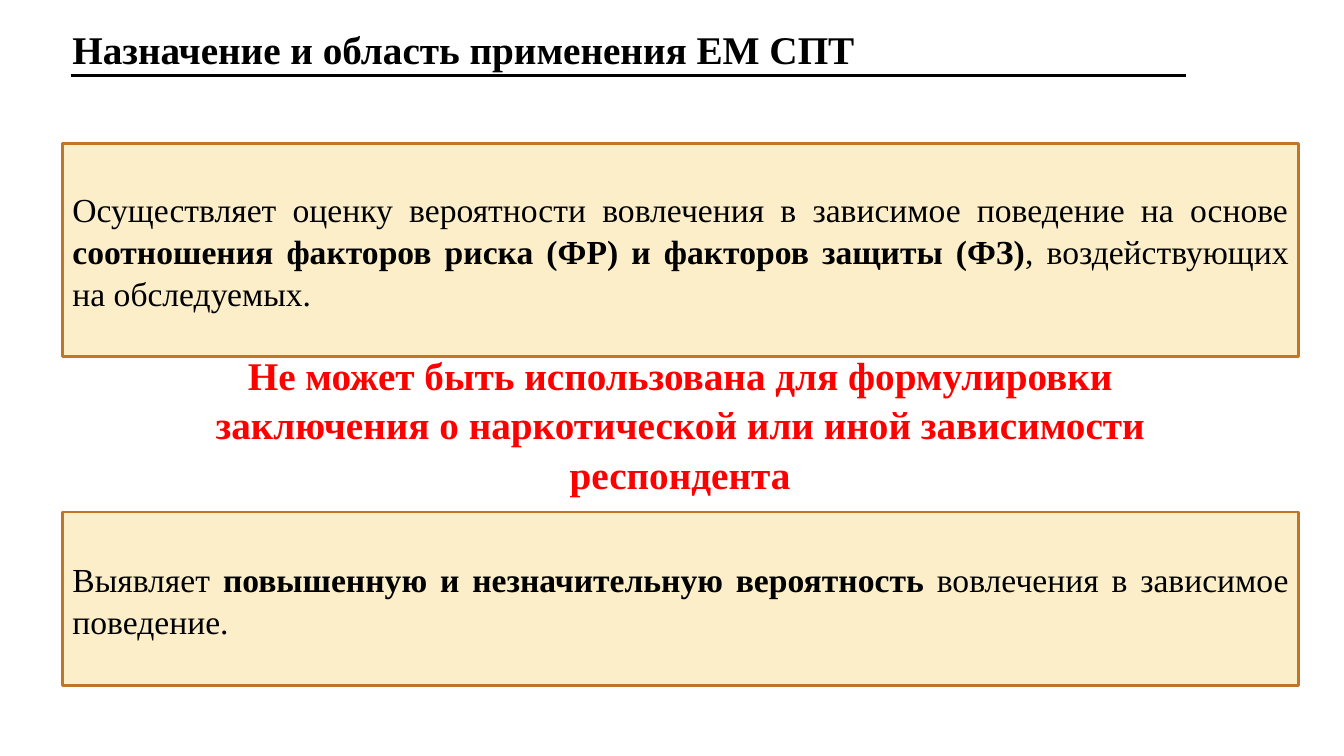
from typing import NamedTuple

from lxml.etree import SubElement
from pptx import Presentation
from pptx.dml.color import RGBColor
from pptx.enum.shapes import MSO_CONNECTOR, MSO_SHAPE
from pptx.enum.text import MSO_ANCHOR as Anchor, PP_ALIGN as Align
from pptx.oxml.ns import qn
from pptx.shapes.base import BaseShape
from pptx.slide import Slide
from pptx.util import Inches, Pt

BLACK = RGBColor(0x00, 0x00, 0x00)
RED = RGBColor(0xFF, 0x00, 0x00)
CREAM = RGBColor(0xFB, 0xEE, 0xC9)
OCHRE = RGBColor(0xC1, 0x75, 0x29)

FONT = "Times New Roman"
LINE_SPACING = 1.05
PANEL_LEFT, PANEL_WIDTH = 0.62, 12.26


class Run(NamedTuple):
    text: str
    bold: bool = False


class Panel(NamedTuple):
    top: float
    height: float
    runs: list[Run]


PANELS = [
    Panel(1.42, 2.12, [
        Run("Осуществляет оценку вероятности вовлечения в зависимое поведение на основе "),
        Run("соотношения факторов риска (ФР) и факторов защиты (ФЗ)", bold=True),
        Run(", воздействующих на обследуемых."),
    ]),
    Panel(5.08, 1.72, [
        Run("Выявляет "),
        Run("повышенную и незначительную вероятность ", bold=True),
        Run("вовлечения в зависимое поведение."),
    ]),
]


def write_text(shape: BaseShape, runs: list[Run], *, size: float, color: RGBColor = BLACK,
               align: Align = Align.LEFT, anchor: Anchor = Anchor.TOP,
               wrap: bool = True) -> None:
    """Fill a shape with one paragraph of formatted runs."""
    frame = shape.text_frame
    frame.word_wrap = wrap
    frame.vertical_anchor = anchor
    paragraph = frame.paragraphs[0]
    paragraph.alignment = align
    paragraph.line_spacing = LINE_SPACING
    for text, bold in runs:
        run = paragraph.add_run()
        run.text = text
        run.font.name = FONT
        run.font.size = Pt(size)
        run.font.bold = bold
        run.font.color.rgb = color


def add_title(slide: Slide, title: str) -> None:
    box = slide.shapes.add_textbox(Inches(PANEL_LEFT), Inches(0.18), Inches(8.04), Inches(0.57))
    write_text(box, [Run(title, bold=True)], size=28, wrap=False)
    rule = slide.shapes.add_connector(
        MSO_CONNECTOR.STRAIGHT, Inches(0.7), Inches(0.75), Inches(11.76), Inches(0.75))
    rule.line.color.rgb = BLACK
    rule.line.width = Pt(2)
    SubElement(rule._element.spPr, qn("a:effectLst"))


def add_panel(slide: Slide, panel: Panel) -> None:
    shape = slide.shapes.add_shape(
        MSO_SHAPE.RECTANGLE, Inches(PANEL_LEFT), Inches(panel.top),
        Inches(PANEL_WIDTH), Inches(panel.height))
    shape.shadow.inherit = False
    shape.fill.solid()
    shape.fill.fore_color.rgb = CREAM
    shape.line.color.rgb = OCHRE
    shape.line.width = Pt(2)
    write_text(shape, panel.runs, size=24, align=Align.JUSTIFY, anchor=Anchor.MIDDLE)


def add_warning(slide: Slide, warning: str) -> None:
    box = slide.shapes.add_textbox(Inches(1.84), Inches(3.41), Inches(9.81), Inches(1.99))
    write_text(box, [Run(warning, bold=True)], size=28, color=RED, align=Align.CENTER)


def main() -> None:
    presentation = Presentation()
    presentation.slide_width = Inches(13.33)
    presentation.slide_height = Inches(7.5)
    slide = presentation.slides.add_slide(presentation.slide_layouts[6])

    # Heading with its rule
    add_title(slide, "Назначение и область применения ЕМ СПТ")

    # Framed statements
    for panel in PANELS:
        add_panel(slide, panel)

    # Warning between the statements
    add_warning(slide, "Не может быть использована для формулировки заключения "
                       "о наркотической или иной зависимости респондента")

    presentation.save("out.pptx")


if __name__ == "__main__":
    main()
